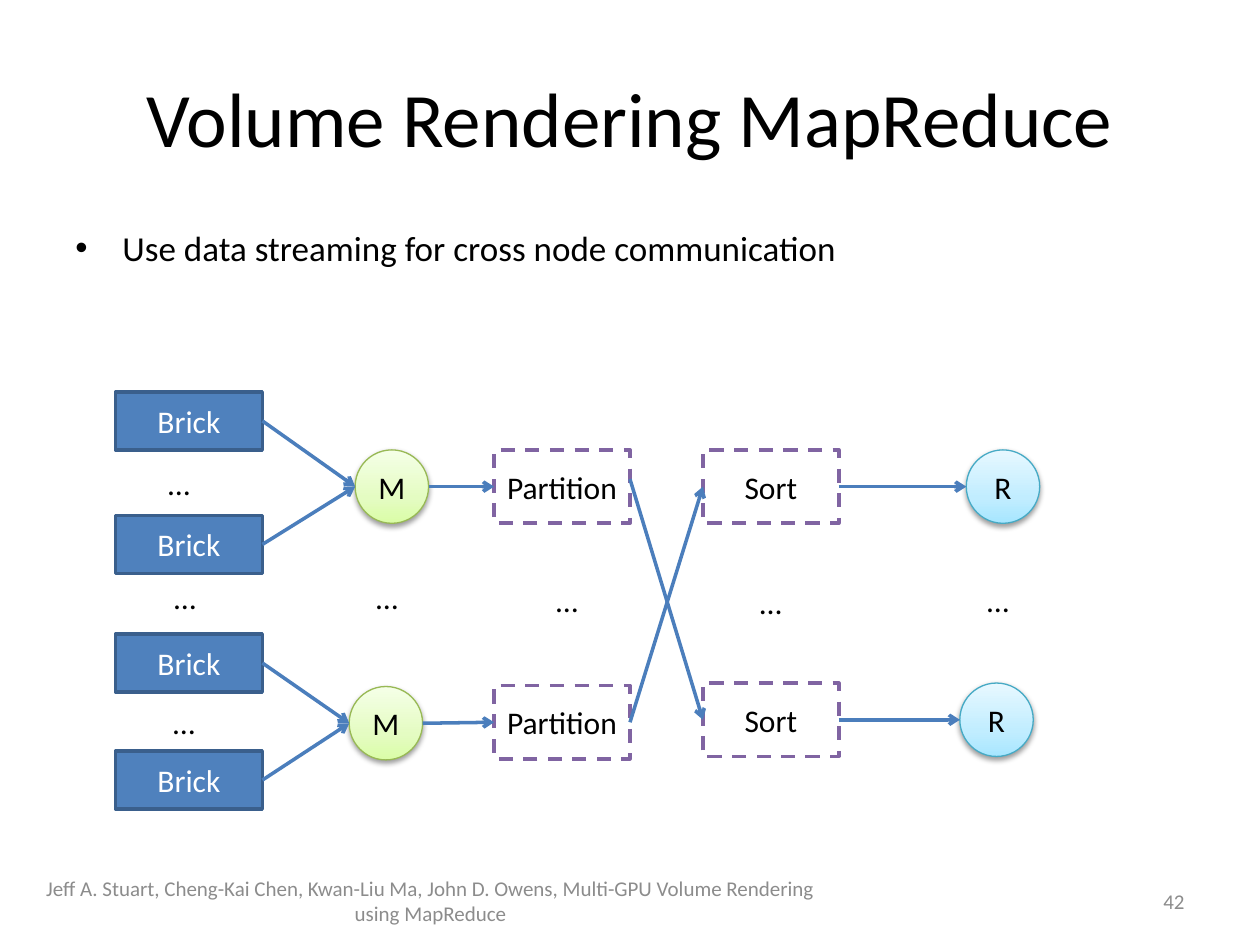
from dataclasses import dataclass

from lxml.etree import SubElement
from pptx import Presentation
from pptx.dml.color import RGBColor
from pptx.enum.dml import MSO_LINE
from pptx.enum.shapes import MSO_CONNECTOR, MSO_SHAPE
from pptx.enum.text import MSO_ANCHOR, PP_ALIGN
from pptx.oxml.ns import qn
from pptx.util import Cm, Pt


@dataclass(frozen=True)
class Theme:
    font: str = "Calibri"
    title_size: int = 44
    body_size: int = 20
    label_size: int = 18
    footer_size: int = 12
    text: str = "000000"
    light_text: str = "FFFFFF"
    footer: str = "8C8C8C"
    brick: str = "4F81BD"
    brick_line: str = "3A5F8C"
    stage: str = "FFFFFF"
    stage_line: str = "8064A2"
    arrow: str = "4B7EBC"
    map_stops: tuple = ((0, "DAFDA7"), (35, "E4FCC2"), (100, "F5FFE7"))
    map_line: str = "98B955"
    reduce_stops: tuple = ((0, "A7E6FF"), (35, "C1EDFF"), (100, "E7F8FF"))
    reduce_line: str = "46AAC5"
    line_width: float = 2
    circle_line_width: float = 0.75


THEME = Theme()

BRICK_LEFT, BRICK_WIDTH, BRICK_HEIGHT = 2.33, 2.96, 1.17
STAGE_WIDTH, NODE_HEIGHT = 2.74, 1.48
PARTITION_LEFT, SORT_LEFT = 9.96, 14.17
ROW_TOP = 9.07
CROSSING_LIFT = 0.15

ELLIPSES = [
    (2.34, 9.22), (2.44, 14.05),
    (2.46, 11.53), (6.53, 11.53), (10.16, 11.58), (14.27, 11.63), (18.85, 11.58),
]


def rgb(value):
    return RGBColor.from_string(value)


def write(shape, text, size, color, align=PP_ALIGN.CENTER, anchor=MSO_ANCHOR.MIDDLE, wrap=True):
    frame = shape.text_frame
    frame.word_wrap = wrap
    frame.vertical_anchor = anchor
    paragraph = frame.paragraphs[0]
    paragraph.alignment = align
    run = paragraph.add_run()
    run.text = text
    run.font.name = THEME.font
    run.font.size = Pt(size)
    run.font.color.rgb = rgb(color)
    return paragraph


def add_text(slide, box, text, size, color, **options):
    shape = slide.shapes.add_textbox(*map(Cm, box))
    return write(shape, text, size, color, **options)


def add_title(slide, text):
    title = slide.shapes.title
    title.left, title.top, title.width, title.height = map(Cm, (1.27, 0.76, 22.86, 3.18))
    write(title, text, THEME.title_size, THEME.text)


def add_bullet(slide, text):
    paragraph = add_text(slide, (1.27, 4.45, 22.86, 12.57), text, THEME.body_size, THEME.text,
                         align=PP_ALIGN.LEFT, anchor=MSO_ANCHOR.TOP)
    properties = paragraph._p.get_or_add_pPr()
    indent = Cm(0.95)
    properties.set("marL", str(indent))
    properties.set("indent", str(-indent))
    SubElement(properties, qn("a:buFont"), typeface="Arial")
    SubElement(properties, qn("a:buChar"), char="•")


def add_node(slide, kind, box, text, line, width, color):
    shape = slide.shapes.add_shape(kind, *map(Cm, box))
    shape.shadow.inherit = False
    shape.line.color.rgb = rgb(line)
    shape.line.width = Pt(width)
    write(shape, text, THEME.label_size, color, wrap=False)
    return shape


def add_brick(slide, top):
    shape = add_node(slide, MSO_SHAPE.RECTANGLE, (BRICK_LEFT, top, BRICK_WIDTH, BRICK_HEIGHT),
                     "Brick", THEME.brick_line, THEME.line_width, THEME.light_text)
    shape.fill.solid()
    shape.fill.fore_color.rgb = rgb(THEME.brick)
    return shape


def add_stage(slide, left, top, text):
    shape = add_node(slide, MSO_SHAPE.RECTANGLE, (left, top, STAGE_WIDTH, NODE_HEIGHT),
                     text, THEME.stage_line, THEME.line_width, THEME.text)
    shape.fill.solid()
    shape.fill.fore_color.rgb = rgb(THEME.stage)
    shape.line.dash_style = MSO_LINE.DASH
    return shape


def add_circle(slide, left, top, text, stops, line):
    shape = add_node(slide, MSO_SHAPE.OVAL, (left, top, NODE_HEIGHT, NODE_HEIGHT),
                     text, line, THEME.circle_line_width, THEME.text)
    shape.fill.gradient()
    shape.fill.gradient_angle = 90
    properties = shape._element.spPr
    stop_list = properties.find(".//" + qn("a:gsLst"))
    for stop in list(stop_list):
        stop_list.remove(stop)
    for percent, color in stops:
        stop = SubElement(stop_list, qn("a:gs"), pos=str(percent * 1000))
        SubElement(stop, qn("a:srgbClr"), val=color)
    shadow = SubElement(properties.find(qn("a:effectLst")), qn("a:outerShdw"),
                        blurRad=str(Pt(3.1)), dist=str(Pt(1.6)), dir="5400000", rotWithShape="0")
    shadow_color = SubElement(shadow, qn("a:srgbClr"), val=THEME.text)
    SubElement(shadow_color, qn("a:alpha"), val="38000")
    return shape


def is_rectangle(shape):
    return shape.auto_shape_type == MSO_SHAPE.RECTANGLE


def add_arrow(slide, source, target, lift=0):
    """Point from source's right side to target's left, starting lift cm above the middle."""
    connector = slide.shapes.add_connector(
        MSO_CONNECTOR.STRAIGHT,
        source.left + source.width, source.top + source.height // 2 - Cm(lift),
        target.left, target.top + target.height // 2)
    if is_rectangle(source) and not lift:
        connector.begin_connect(source, 3)
    if is_rectangle(target):
        connector.end_connect(target, 1)
    connector.line.color.rgb = rgb(THEME.arrow)
    connector.line.width = Pt(THEME.line_width)
    SubElement(connector.line._get_or_add_ln(), qn("a:tailEnd"), type="arrow")
    SubElement(connector._element.spPr, qn("a:effectLst"))


def add_row(slide, brick_tops, map_at, partition_top, sort_top, reduce_at):
    """Draw one node's pipeline and return its partition and sort stages."""
    bricks = [add_brick(slide, top) for top in brick_tops]
    mapper = add_circle(slide, *map_at, "M", THEME.map_stops, THEME.map_line)
    partition = add_stage(slide, PARTITION_LEFT, partition_top, "Partition")
    sort = add_stage(slide, SORT_LEFT, sort_top, "Sort")
    reducer = add_circle(slide, *reduce_at, "R", THEME.reduce_stops, THEME.reduce_line)
    for brick in bricks:
        add_arrow(slide, brick, mapper)
    add_arrow(slide, mapper, partition)
    add_arrow(slide, sort, reducer)
    return partition, sort


def main():
    presentation = Presentation()
    presentation.slide_width, presentation.slide_height = Cm(25.4), Cm(19.05)
    slide = presentation.slides.add_slide(presentation.slide_layouts[5])

    add_title(slide, "Volume Rendering MapReduce")
    add_bullet(slide, "Use data streaming for cross node communication")
    add_text(slide, (0.64, 17.65, 16.08, 1.02),
             "Jeff A. Stuart, Cheng-Kai Chen, Kwan-Liu Ma, John D. Owens, "
             "Multi-GPU Volume Rendering using MapReduce",
             THEME.footer_size, THEME.footer)
    add_text(slide, (18.21, 17.65, 5.92, 1.02), "42", THEME.footer_size, THEME.footer,
             align=PP_ALIGN.RIGHT)

    upper_partition, upper_sort = add_row(
        slide, (7.9, 10.39), (7.16, ROW_TOP), ROW_TOP, ROW_TOP, (19.48, ROW_TOP))
    lower_partition, lower_sort = add_row(
        slide, (12.78, 15.14), (7.04, 13.84), 13.82, 13.77, (19.35, 13.77))
    add_arrow(slide, upper_partition, lower_sort, CROSSING_LIFT)
    add_arrow(slide, lower_partition, upper_sort)

    for left, top in ELLIPSES:
        add_text(slide, (left, top, 2.54, 1.02), "…", THEME.label_size, THEME.text,
                 anchor=MSO_ANCHOR.TOP)

    presentation.save("out.pptx")


if __name__ == "__main__":
    main()
